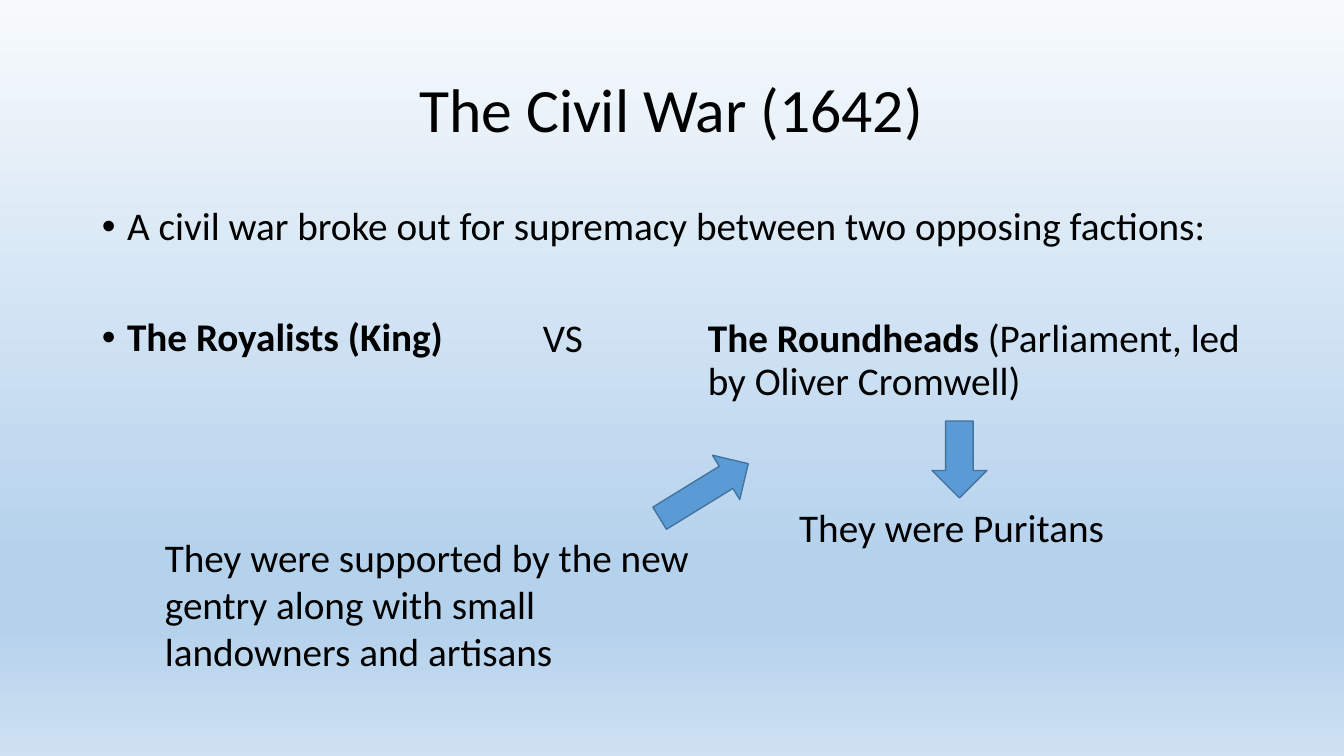
import dataclasses

import lxml.etree
import pptx
import pptx.dml.color
import pptx.enum.shapes
import pptx.enum.text
import pptx.oxml.ns
import pptx.slide
import pptx.util

EMU_PER_PX = 12192000 / 1344
ALIGN = pptx.enum.text.PP_ALIGN
ANCHOR = pptx.enum.text.MSO_ANCHOR
SHAPE = pptx.enum.shapes.MSO_SHAPE


@dataclasses.dataclass(frozen=True)
class Theme:
    font: str = "Calibri"
    title_size: int = 44
    body_size: int = 28
    ink: str = "000000"
    arrow_fill: str = "5B9BD5"
    arrow_line: str = "43739E"
    sky: tuple[tuple[int, str], ...] = (
        (0, "F7FAFD"), (74, "B5D2EC"), (83, "B5D2EC"), (100, "CEE1F2"))


@dataclasses.dataclass(frozen=True)
class Frame:
    left: int
    top: int
    width: int
    height: int

    def emu(self) -> list[pptx.util.Emu]:
        return [px(value) for value in dataclasses.astuple(self)]


@dataclasses.dataclass(frozen=True)
class Span:
    text: str
    bold: bool = False


@dataclasses.dataclass(frozen=True)
class Arrow:
    kind: SHAPE
    frame: Frame
    rotation: float = 0


THEME = Theme()
ARROWS = (
    Arrow(SHAPE.DOWN_ARROW, Frame(932, 421, 55, 77)),
    Arrow(SHAPE.RIGHT_ARROW, Frame(652, 465, 104, 52), 328.4),
)


def px(value: int) -> pptx.util.Emu:
    return pptx.util.Emu(round(value * EMU_PER_PX))


def color(value: str) -> pptx.dml.color.RGBColor:
    return pptx.dml.color.RGBColor.from_string(value)


def paint_background(page: pptx.slide.Slide) -> None:
    fill = page.background.fill
    fill.gradient()
    fill.gradient_angle = 270
    stops = page.element.xpath(".//p:bg//a:gsLst")[0]
    for stop in list(stops):
        stops.remove(stop)
    name = pptx.oxml.ns.qn
    for percent, value in THEME.sky:
        stop = lxml.etree.SubElement(stops, name("a:gs"), pos=str(percent * 1000))
        lxml.etree.SubElement(stop, name("a:srgbClr"), val=value)


def add_bullet(para) -> None:
    properties = para._p.get_or_add_pPr()
    properties.set("marL", "228600")
    properties.set("indent", "-228600")
    name = pptx.oxml.ns.qn
    lxml.etree.SubElement(properties, name("a:buFont"), typeface="Arial")
    lxml.etree.SubElement(properties, name("a:buChar"), char="•")


def add_text(page: pptx.slide.Slide, frame: Frame, *paragraphs: tuple[Span, ...],
             size: int = THEME.body_size, align: ALIGN = ALIGN.LEFT,
             anchor: ANCHOR = ANCHOR.TOP, line_spacing: float = 1.0,
             gap: int = 0, bullet: bool = False) -> None:
    text_frame = page.shapes.add_textbox(*frame.emu()).text_frame
    text_frame.word_wrap = True
    text_frame.vertical_anchor = anchor
    for index, spans in enumerate(paragraphs):
        para = text_frame.add_paragraph() if index else text_frame.paragraphs[0]
        para.alignment = align
        para.line_spacing = line_spacing
        para.space_before = pptx.util.Pt(gap if index else 0)
        if bullet:
            add_bullet(para)
        for span in spans:
            run = para.add_run()
            run.text = span.text
            run.font.name = THEME.font
            run.font.size = pptx.util.Pt(size)
            run.font.bold = span.bold
            run.font.color.rgb = color(THEME.ink)


def add_arrow(page: pptx.slide.Slide, arrow: Arrow) -> None:
    shape = page.shapes.add_shape(arrow.kind, *arrow.frame.emu())
    shape.rotation = arrow.rotation
    shape.shadow.inherit = False
    shape.fill.solid()
    shape.fill.fore_color.rgb = color(THEME.arrow_fill)
    shape.line.color.rgb = color(THEME.arrow_line)
    shape.line.width = pptx.util.Pt(1)


def main() -> None:
    deck = pptx.Presentation()
    deck.slide_width, deck.slide_height = px(1344), px(756)
    page = deck.slides.add_slide(deck.slide_layouts[6])
    paint_background(page)

    add_text(page, Frame(92, 40, 1159, 146), (Span("The Civil War (1642)"),),
             size=THEME.title_size, align=ALIGN.CENTER, anchor=ANCHOR.MIDDLE,
             line_spacing=0.9)
    add_text(page, Frame(92, 202, 1159, 160),
             (Span("A civil war broke out for supremacy between two opposing factions:"),),
             (Span("The Royalists (King)", bold=True),),
             line_spacing=0.9, gap=49, bullet=True)
    add_text(page, Frame(533, 314, 80, 54), (Span("VS"),), line_spacing=0.9)
    add_text(page, Frame(698, 314, 553, 100),
             (Span("The Roundheads ", bold=True),
              Span("(Parliament, led by Oliver Cromwell)")), line_spacing=0.9)
    add_text(page, Frame(704, 498, 495, 57), (Span("They were Puritans"),),
             align=ALIGN.CENTER)
    add_text(page, Frame(155, 528, 567, 152),
             (Span("They were supported by the new gentry along with small "
                   "landowners and artisans"),))
    for arrow in ARROWS:
        add_arrow(page, arrow)

    deck.save("out.pptx")


if __name__ == "__main__":
    main()
